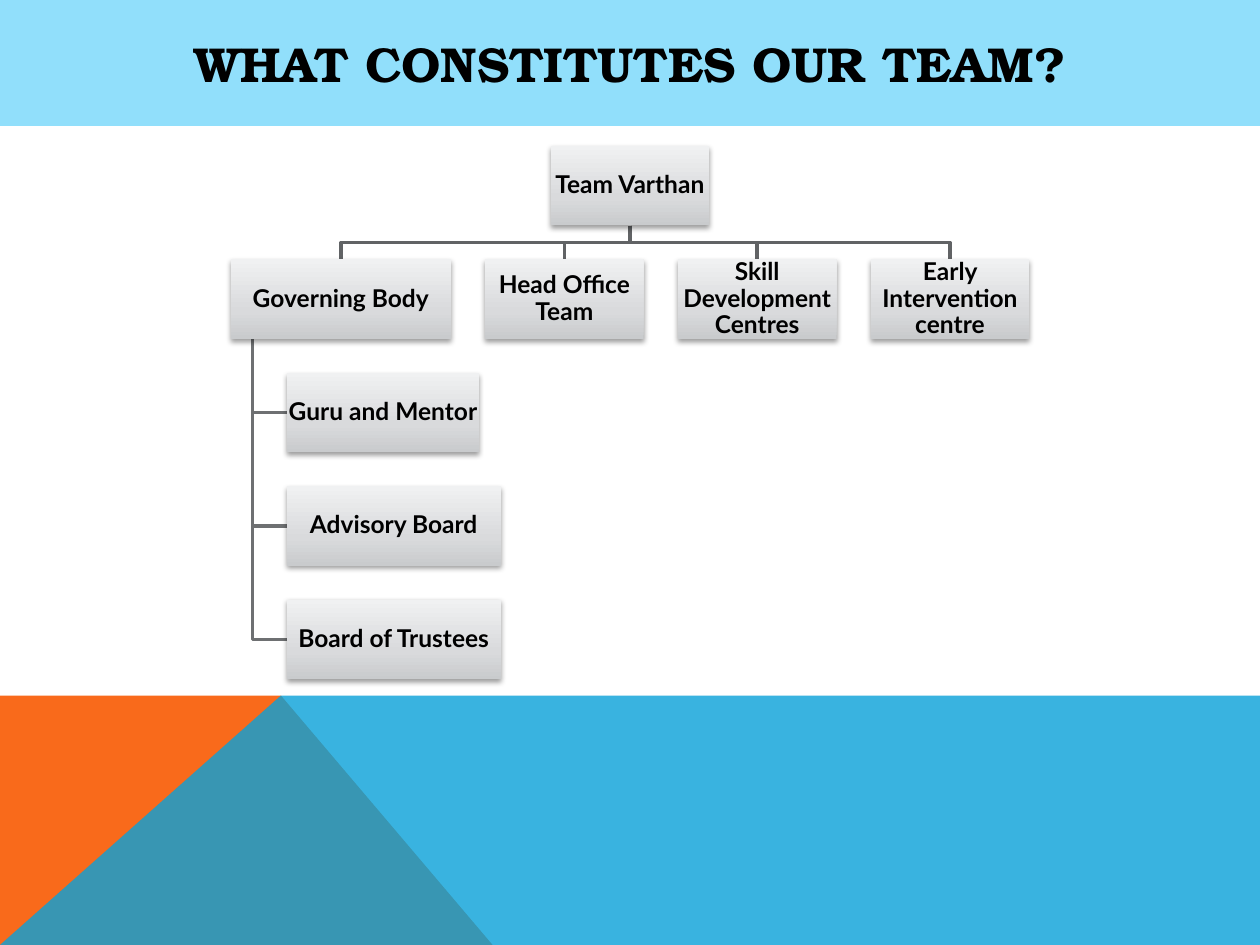
"""Build a team organisation chart slide."""
from lxml import etree
from pptx import Presentation, util as u
from pptx.dml.color import RGBColor
from pptx.enum import shapes, text
from pptx.oxml import parse_xml
from pptx.oxml.ns import nsdecls, qn

TITLE = "WHAT CONSTITUTES OUR TEAM?"
ROOT = ("Team Varthan", 1.26)
UNITS = [
    ("Governing Body", 1.75),
    ("Head Office Team", 1.26),
    ("Skill Development Centres", 1.26),
    ("Early Intervention centre", 1.26),
]
BODIES = [("Guru and Mentor", 1.53), ("Advisory Board", 1.7), ("Board of Trustees", 1.7)]

THEME = {
    "band": "91DFFB", "orange": "F96A1B", "blue": "08A1D9", "ink": "000000",
    "trunk": "616365", "branch": "6E7072", "line": 2,
    "box": [(0, "C9CBCD"), (35, "D9DADC"), (100, "F0F1F2")],
    "title": {"name": "TeX Gyre Bonum", "size": u.Pt(28), "bold": True},
    "label": {"name": "Lato", "size": u.Pt(14), "bold": True},
}
W, H = 10, 7.5
TOP, PITCH, BOX_H = 1.16, 0.9, 0.63
GAP = PITCH - BOX_H
FLOOR, PEAK, FOOT = 5.52, 2.23, 3.91


def row_y(row):
    return TOP + row * PITCH


def outline(s, points, close):
    pts = [(u.Inches(x), u.Inches(y)) for x, y in points]
    builder = s.shapes.build_freeform(*pts[0])
    builder.add_line_segments(pts[1:], close=close)
    sp = builder.convert_to_shape()
    sp.shadow.inherit = False
    return sp


def paint(sp, color, alpha=100):
    sp.fill.solid()
    sp.fill.fore_color.rgb = RGBColor.from_string(color)
    sp.line.fill.background()
    if alpha < 100:
        clr = sp._element.spPr.find(qn("a:solidFill"))[0]
        etree.SubElement(clr, qn("a:alpha")).set("val", str(alpha * 1000))


def wire(s, points, color):
    sp = outline(s, points, False)
    sp.fill.background()
    sp.line.color.rgb = RGBColor.from_string(color)
    sp.line.width = u.Pt(THEME["line"])


def panel(s, x, y, w, h, label, font, inset):
    sp = s.shapes.add_shape(shapes.MSO_SHAPE.RECTANGLE, *map(u.Inches, (x, y, w, h)))
    sp.shadow.inherit = False
    sp.line.fill.background()
    tf = sp.text_frame
    tf.word_wrap = True
    tf.vertical_anchor = text.MSO_ANCHOR.MIDDLE
    for side in ("left", "top", "right", "bottom"):
        setattr(tf, f"margin_{side}", u.Inches(inset))
    p = tf.paragraphs[0]
    p.alignment = text.PP_ALIGN.CENTER
    r = p.add_run()
    r.text = label
    for key, value in font.items():
        setattr(r.font, key, value)
    r.font.color.rgb = RGBColor.from_string(THEME["ink"])
    return sp


def box(s, x, y, w, label):
    sp = panel(s, x, y, w, BOX_H, label, THEME["label"], 0.01)
    sp.text_frame.paragraphs[0].line_spacing = 0.9
    stops = "".join(
        f'<a:gs pos="{pos * 1000}"><a:srgbClr val="{color}"/></a:gs>' for pos, color in THEME["box"]
    )
    props = sp._element.spPr
    props.find(qn("a:prstGeom")).addnext(parse_xml(
        f'<a:gradFill {nsdecls("a")} rotWithShape="1"><a:gsLst>{stops}</a:gsLst>'
        '<a:lin ang="16200000" scaled="0"/></a:gradFill>'))
    props.find(qn("a:effectLst")).append(parse_xml(
        f'<a:outerShdw {nsdecls("a")} blurRad="40000" dist="20000" dir="5400000" rotWithShape="0">'
        '<a:srgbClr val="000000"><a:alpha val="38000"/></a:srgbClr></a:outerShdw>'))


def place_boxes():
    root = (W / 2 - ROOT[1] / 2, row_y(0), ROOT[1], ROOT[0])
    x = (W - sum(w for _, w in UNITS) - GAP * (len(UNITS) - 1)) / 2
    units = []
    for label, w in UNITS:
        units.append((x, row_y(1), w, label))
        x += w + GAP
    stem = units[0][0] + units[0][2] / 10
    bodies = [(stem + GAP, row_y(i), w, label) for i, (label, w) in enumerate(BODIES, 2)]
    return root, units, stem, bodies


def draw_chart(s):
    root, units, stem, bodies = place_boxes()
    start, bus = row_y(0) + BOX_H, row_y(1) - GAP / 2
    for x, y, w, _ in units:
        mid = x + w / 2
        wire(s, [(W / 2, start), (W / 2, bus), (mid, bus), (mid, y)], THEME["trunk"])
    for x, y, _, _ in bodies:
        mid = y + BOX_H / 2
        wire(s, [(stem, row_y(1) + BOX_H), (stem, mid), (x, mid)], THEME["branch"])
    for item in [root, *units, *bodies]:
        box(s, *item)


def main():
    prs = Presentation()
    prs.slide_width, prs.slide_height = u.Inches(W), u.Inches(H)
    s = prs.slides.add_slide(prs.slide_layouts[6])
    paint(outline(s, [(0, H), (0, FLOOR), (PEAK, FLOOR), (FOOT, H)], True), THEME["orange"])
    paint(outline(s, [(0, H), (PEAK, FLOOR), (W, FLOOR), (W, H)], True), THEME["blue"], 80)
    paint(panel(s, 0, 0, W, 1, TITLE, THEME["title"], 0.1), THEME["band"])
    draw_chart(s)
    prs.save("out.pptx")


if __name__ == "__main__":
    main()
